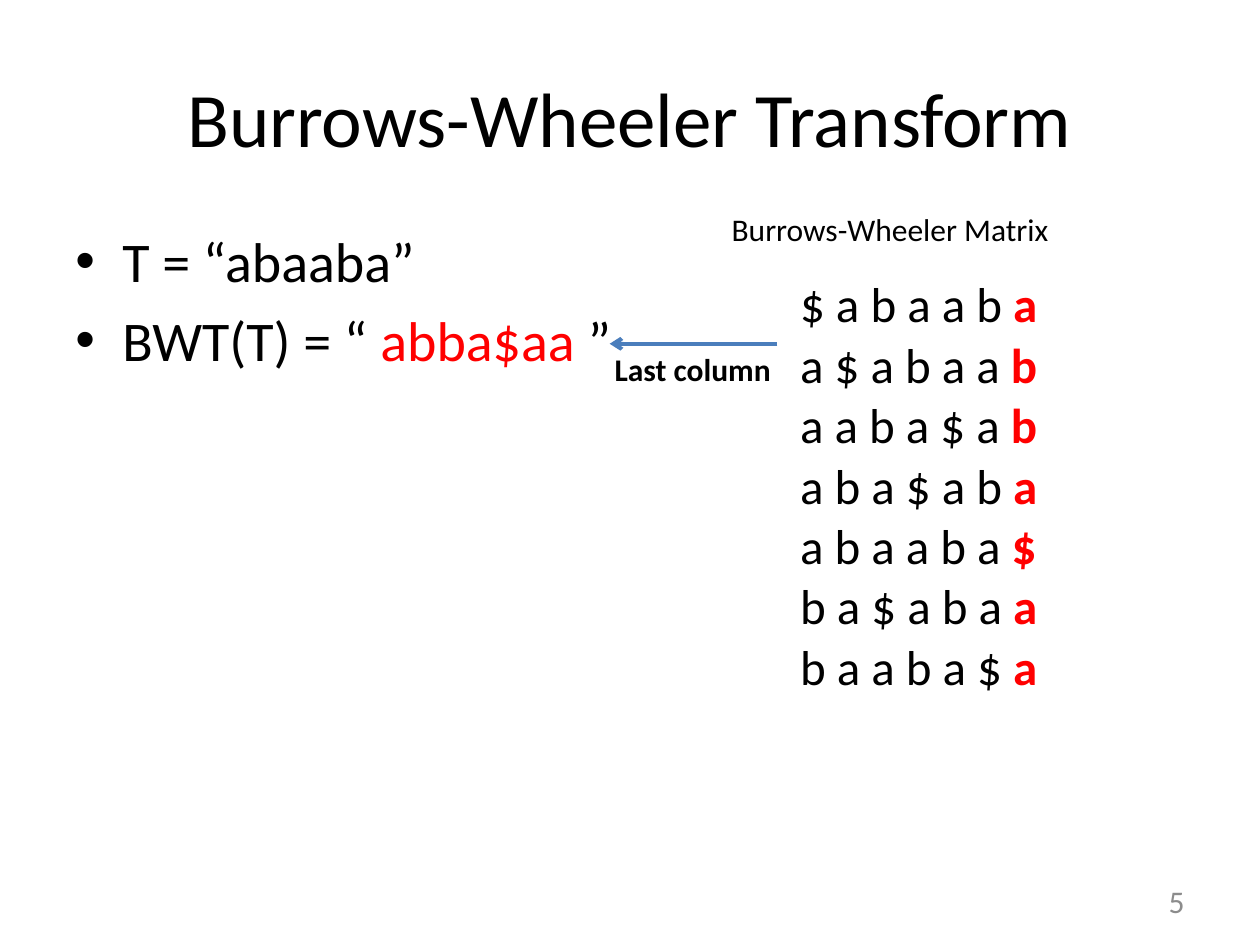
from lxml import etree
from pptx import Presentation
from pptx.dml.color import RGBColor
from pptx.enum.shapes import MSO_CONNECTOR
from pptx.enum.text import MSO_ANCHOR, PP_ALIGN
from pptx.oxml.ns import qn
from pptx.util import Cm, Pt

BLACK = RGBColor(0x00, 0x00, 0x00)
RED = RGBColor(0xFF, 0x00, 0x00)
BLUE = RGBColor(0x4B, 0x7E, 0xBC)
GRAY = RGBColor(0x8C, 0x8C, 0x8C)
STRAIGHT = MSO_CONNECTOR.STRAIGHT
MIDDLE = MSO_ANCHOR.MIDDLE
LEFT, CENTER, RIGHT = PP_ALIGN.LEFT, PP_ALIGN.CENTER, PP_ALIGN.RIGHT
FONT = "Calibri"
TITLE_ONLY = 5


def write(paragraph, parts, size, color=BLACK, align=LEFT):
    """Fill a paragraph with (text, is_highlighted) parts; highlights are red."""
    paragraph.alignment = align
    paragraph.font.name = FONT
    paragraph.font.size = Pt(size)
    for text, is_highlighted in parts:
        run = paragraph.add_run()
        run.text = text
        run.font.color.rgb = RED if is_highlighted else color


def add_text_box(left, top, width, height, wrap=True):
    box = slide.shapes.add_textbox(Cm(left), Cm(top), Cm(width), Cm(height))
    box.text_frame.word_wrap = wrap
    return box.text_frame


presentation = Presentation()
presentation.slide_width = Cm(25.4)
presentation.slide_height = Cm(19.05)
slide = presentation.slides.add_slide(presentation.slide_layouts[TITLE_ONLY])

# Title
title = slide.shapes.title
title.left, title.top, title.width, title.height = Cm(1.27), Cm(0.76), Cm(22.86), Cm(3.18)
title.text_frame.vertical_anchor = MIDDLE
write(title.text_frame.paragraphs[0], [("Burrows-Wheeler Transform", False)], 44, align=CENTER)

# Bulleted text and its transform
bullets = [
    [("T = “abaaba”", False)],
    [("BWT(T) = “ ", False), ("abba$aa", True), (" ”", False)],
]
body = add_text_box(1.27, 4.45, 22.86, 12.57)
for index, parts in enumerate(bullets):
    paragraph = body.add_paragraph() if index else body.paragraphs[0]
    write(paragraph, parts, 32)
    paragraph.space_before = Pt(6.4)
    properties = paragraph._p.get_or_add_pPr()
    properties.set("marL", str(Cm(0.95)))
    properties.set("indent", str(-Cm(0.95)))
    etree.SubElement(properties, qn("a:buFont")).set("typeface", "Arial")
    etree.SubElement(properties, qn("a:buChar")).set("char", "•")
    # The schema wants the bullet ahead of the default run properties
    properties.append(properties.find(qn("a:defRPr")))

# Arrow from the matrix to the transform
arrow = slide.shapes.add_connector(STRAIGHT, Cm(15.67), Cm(6.93), Cm(12.29), Cm(6.93))
arrow.line.color.rgb = BLUE
arrow.line.width = Pt(2.25)
etree.SubElement(arrow.line._get_or_add_ln(), qn("a:tailEnd")).set("type", "arrow")
etree.SubElement(arrow._element.spPr, qn("a:effectLst"))

arrow_label = add_text_box(12.14, 6.93, 3.68, 1.02, wrap=False).paragraphs[0]
write(arrow_label, [("Last column", False)], 18)
arrow_label.font.bold = True

matrix_heading = add_text_box(14.5, 4.11, 7.14, 1.02).paragraphs[0]
write(matrix_heading, [("Burrows-Wheeler Matrix", False)], 18)

# Sorted rotations, with the last column highlighted
rotations = ["$abaaba", "a$abaab", "aaba$ab", "aba$aba", "abaaba$", "ba$abaa", "baaba$a"]
row_height = Cm(1.21)
matrix = slide.shapes.add_table(
    len(rotations), 1, Cm(16.1), Cm(5.54), Cm(5.21), row_height * len(rotations)
).table
matrix.first_row = False
matrix.horz_banding = False
for row, rotation in enumerate(rotations):
    cell = matrix.cell(row, 0)
    cell.fill.background()
    cell.vertical_anchor = MIDDLE
    cell.margin_left = cell.margin_right = cell.margin_top = Cm(0.03)
    cell.margin_bottom = 0
    paragraph = cell.text_frame.paragraphs[0]
    write(paragraph, [(" ".join(rotation[:-1]) + " ", False), (rotation[-1], True)], 28)
    paragraph.runs[-1].font.bold = True

# Slide number
number = add_text_box(18.21, 17.65, 5.92, 1.02)
number.vertical_anchor = MIDDLE
write(number.paragraphs[0], [("5", False)], 18, GRAY, RIGHT)

presentation.save("out.pptx")
